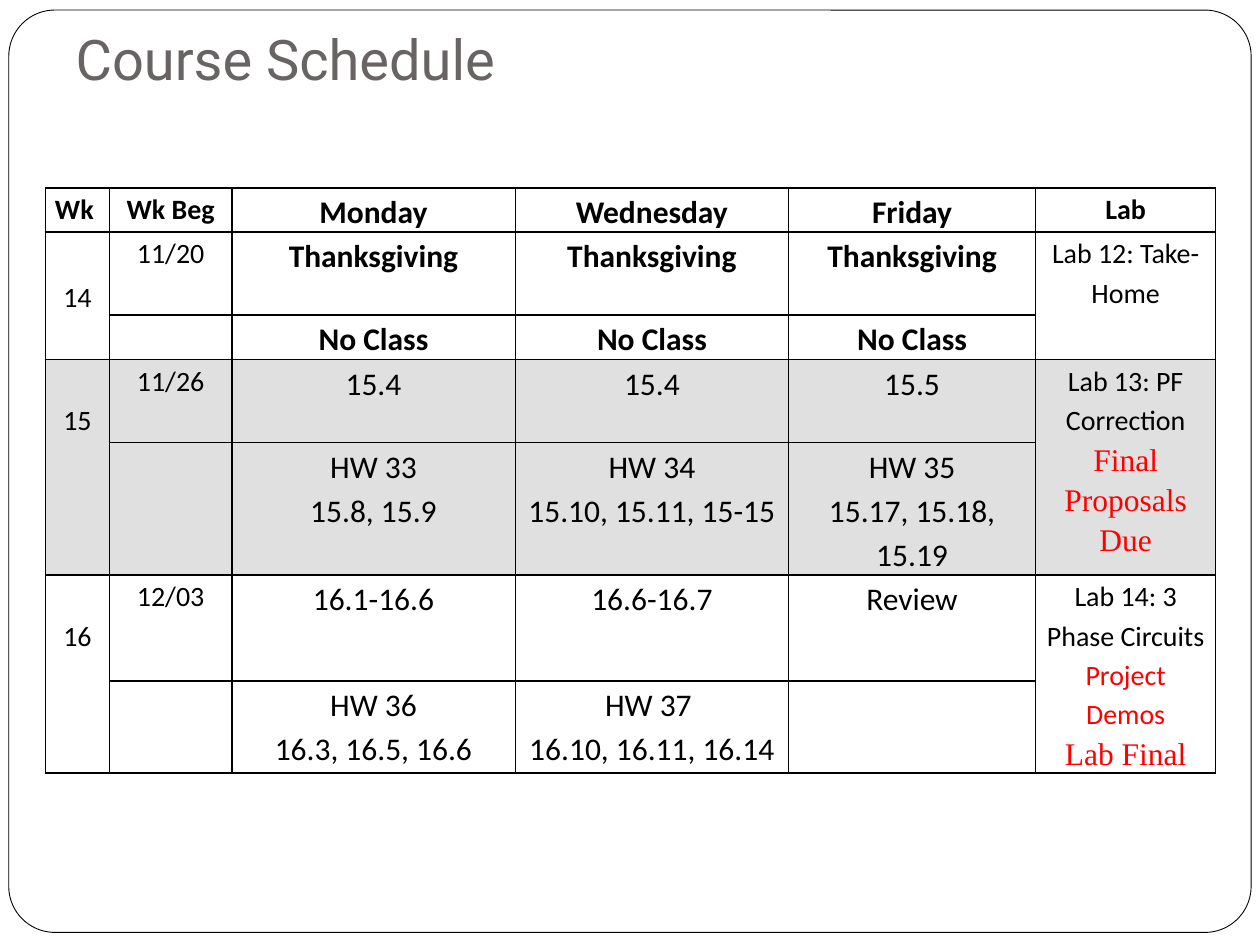
from dataclasses import dataclass

from lxml import etree
from pptx import Presentation
from pptx.dml.color import RGBColor
from pptx.enum.shapes import MSO_SHAPE
from pptx.enum.text import MSO_ANCHOR, MSO_AUTO_SIZE, PP_ALIGN
from pptx.oxml.ns import qn
from pptx.util import Inches, Pt

ROUNDED = MSO_SHAPE.ROUNDED_RECTANGLE
TOP, MIDDLE, BOTTOM = MSO_ANCHOR.TOP, MSO_ANCHOR.MIDDLE, MSO_ANCHOR.BOTTOM
LEFT, CENTER = PP_ALIGN.LEFT, PP_ALIGN.CENTER
NO_FIT = MSO_AUTO_SIZE.NONE
TITLE_ONLY = 5


@dataclass(frozen=True)
class Theme:
    ink: str = "000000"
    paper: str = "FFFFFF"
    shade: str = "E1E0E0"
    alert: str = "FF0000"
    heading: str = "696464"
    body_font: str = "Calibri"
    alert_font: str = "Times New Roman"
    title_font: str = "Roboto"
    title_size: int = 32
    class_size: int = 18
    side_size: int = 16
    line_spacing: float = 1.15


THEME = Theme()
COLUMN_WIDTHS = [0.51, 0.97, 2.25, 2.17, 1.96, 1.43]
ROW_HEIGHTS = [0.35, 0.66, 0.35, 0.66, 1.05, 0.84, 0.73]
SIDE_COLUMNS = (0, 1, 5)
WEEK_LINE = 0.31

HEADINGS = ["Wk ", "Wk Beg", "Monday", "Wednesday", "Friday", "Lab"]
WEEKS = [
    {
        "number": "14", "begins": "11/20", "bold": True, "fill": THEME.paper,
        "anchor": MIDDLE, "inset": 0,
        "topics": ["Thanksgiving"] * 3,
        "homework": ["No Class"] * 3,
        "lab": ["Lab 12: Take-Home"],
    },
    {
        "number": "15", "begins": "11/26", "bold": False, "fill": THEME.shade,
        "anchor": TOP, "inset": WEEK_LINE,
        "topics": ["15.4", "15.4", "15.5"],
        "homework": ["HW 33\n15.8, 15.9", "HW 34\n15.10, 15.11, 15-15",
                     "HW 35\n15.17, 15.18, 15.19"],
        "lab": ["Lab 13: PF Correction",
                ("Final Proposals Due", THEME.alert_font, THEME.class_size)],
    },
    {
        "number": "16", "begins": "12/03", "bold": False, "fill": THEME.paper,
        "anchor": TOP, "inset": WEEK_LINE,
        "topics": ["16.1-16.6", "16.6-16.7", "Review"],
        "homework": ["HW 36\n16.3, 16.5, 16.6", "HW 37 \n16.10, 16.11, 16.14", ""],
        "lab": ["Lab 14: 3 Phase Circuits",
                ("Project Demos", THEME.body_font, THEME.side_size),
                ("Lab Final", THEME.alert_font, THEME.class_size)],
    },
]


def format_font(font, color, **values):
    for name, value in values.items():
        setattr(font, name, value)
    font.color.rgb = RGBColor.from_string(color)


def add_frame(page, box):
    frame = page.shapes.add_shape(ROUNDED, *map(Inches, box))
    frame.shadow.inherit = False
    frame.adjustments[0] = 0.05
    frame.fill.solid()
    frame.fill.fore_color.rgb = RGBColor.from_string(THEME.paper)
    frame.line.color.rgb = RGBColor.from_string(THEME.ink)
    frame.line.width = Pt(0.5)
    page.shapes.title._element.addprevious(frame._element)


def place_title(page, box, text):
    title = page.shapes.title
    title.left, title.top, title.width, title.height = map(Inches, box)
    text_frame = title.text_frame
    settings = {
        "auto_size": NO_FIT, "word_wrap": True, "vertical_anchor": BOTTOM,
        "margin_left": Inches(0.1), "margin_right": Inches(0.1),
        "margin_top": Inches(0.05), "margin_bottom": Inches(0.1),
    }
    for name, value in settings.items():
        setattr(text_frame, name, value)
    para = text_frame.paragraphs[0]
    para.alignment = LEFT
    span = para.add_run()
    span.text = text
    format_font(span.font, THEME.heading, name=THEME.title_font,
                size=Pt(THEME.title_size), bold=False)


def style_cell(cell, fill):
    settings = {
        "margin_left": Inches(0.07), "margin_right": Inches(0.07),
        "margin_top": 0, "margin_bottom": 0, "vertical_anchor": TOP,
    }
    for name, value in settings.items():
        setattr(cell, name, value)
    properties = cell._tc.get_or_add_tcPr()
    for side in ("a:lnL", "a:lnR", "a:lnT", "a:lnB"):
        border = etree.SubElement(properties, qn(side), w=str(Pt(1)))
        paint = etree.SubElement(border, qn("a:solidFill"))
        etree.SubElement(paint, qn("a:srgbClr"), val=THEME.ink)
    cell.fill.solid()
    cell.fill.fore_color.rgb = RGBColor.from_string(fill)


def write_cell(cell, lines, size, bold=False):
    for index, line in enumerate(lines):
        paragraphs = cell.text_frame.paragraphs
        para = cell.text_frame.add_paragraph() if index else paragraphs[0]
        para.alignment = CENTER
        para.line_spacing = THEME.line_spacing
        color, font_name, font_size = THEME.ink, THEME.body_font, size
        if isinstance(line, tuple):
            line, font_name, font_size = line
            color = THEME.alert
        span = para.add_run()
        span.text = line
        format_font(span.font, color, name=font_name, size=Pt(font_size), bold=bold)


def fill_week(table, row, week):
    for column in (0, 5):
        table.cell(row, column).merge(table.cell(row + 1, column))
    number = table.cell(row, 0)
    number.vertical_anchor = week["anchor"]
    number.margin_top = Inches(week["inset"])
    write_cell(number, [week["number"]], THEME.side_size)
    write_cell(table.cell(row, 1), [week["begins"]], THEME.side_size)
    write_cell(table.cell(row, 5), week["lab"], THEME.side_size)
    for offset, entries in enumerate((week["topics"], week["homework"])):
        for column, entry in enumerate(entries, start=2):
            if entry:
                write_cell(table.cell(row + offset, column), entry.split("\n"),
                           THEME.class_size, week["bold"])


def add_schedule(page, box):
    table = page.shapes.add_table(
        len(ROW_HEIGHTS), len(COLUMN_WIDTHS), *map(Inches, box)).table
    table.first_row = table.horz_banding = False
    for column, width in zip(table.columns, COLUMN_WIDTHS):
        column.width = Inches(width)
    fills = [THEME.paper] + [week["fill"] for week in WEEKS for _ in range(2)]
    for row, height, fill in zip(table.rows, ROW_HEIGHTS, fills):
        row.height = Inches(height)
        for cell in row.cells:
            style_cell(cell, fill)
    for column, heading in enumerate(HEADINGS):
        size = THEME.side_size if column in SIDE_COLUMNS else THEME.class_size
        write_cell(table.cell(0, column), [heading], size, True)
    for index, week in enumerate(WEEKS):
        fill_week(table, 1 + 2 * index, week)


def main():
    deck = Presentation()
    deck.slide_width, deck.slide_height = Inches(10), Inches(7.5)
    page = deck.slides.add_slide(deck.slide_layouts[TITLE_ONLY])
    add_frame(page, (0.07, 0.08, 9.86, 7.32))
    place_title(page, (0.5, 0.28, 9, 0.55), "Course Schedule")
    add_schedule(page, (0.36, 1.49, sum(COLUMN_WIDTHS), sum(ROW_HEIGHTS)))
    deck.save("out.pptx")


if __name__ == "__main__":
    main()
